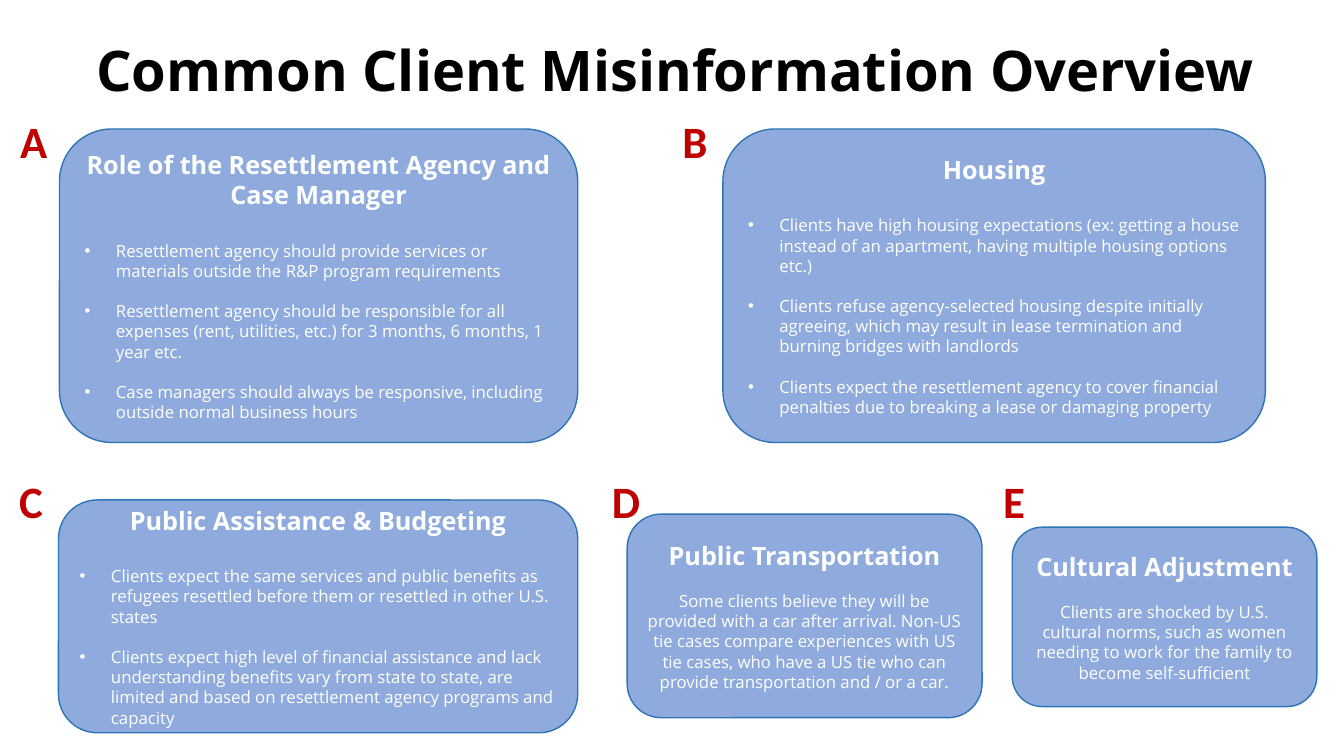
from lxml import etree
from pptx import Presentation
from pptx.dml.color import RGBColor
from pptx.enum.shapes import MSO_SHAPE as Shape
from pptx.enum.text import MSO_ANCHOR as Anchor, MSO_AUTO_SIZE as AutoSize, PP_ALIGN as Align
from pptx.oxml.ns import qn
from pptx.util import Inches, Pt

COLORS = {"title": "000000", "panel": "8FAADC", "border": "2E75B6",
          "text": "FFFFFF", "letter": "C00000"}

# Letter, letter position, panel box (left, top, width, height), heading, bulleted, texts
TOPICS = [
    ("B", (6.67, 1.08), (7.17, 1.28, 5.38, 3.11), "Housing", True, [
        "Clients have high housing expectations (ex: getting a house instead of an "
        "apartment, having multiple housing options etc.)",
        "Clients refuse agency-selected housing despite initially agreeing, which may "
        "result in lease termination and burning bridges with landlords",
        "Clients expect the resettlement agency to cover financial penalties due to "
        "breaking a lease or damaging property"]),
    ("D", (5.97, 4.65), (6.22, 5.1, 3.52, 2.02), "Public Transportation", False, [
        "Some clients believe they will be provided with a car after arrival. Non-US tie "
        "cases compare experiences with US tie cases, who have a US tie who can provide "
        "transportation and / or a car."]),
    ("E", (9.85, 4.65), (10.04, 5.23, 3.02, 1.78), "Cultural Adjustment", False, [
        "Clients are shocked by U.S. cultural norms, such as women needing to work for "
        "the family to become self-sufficient"]),
    ("C", (0.09, 4.65), (0.58, 4.96, 5.15, 2.31), "Public Assistance & Budgeting", True, [
        "Clients expect the same services and public benefits as refugees resettled "
        "before them or resettled in other U.S. states",
        "Clients expect high level of financial assistance and lack understanding "
        "benefits vary from state to state, are limited and based on resettlement agency "
        "programs and capacity"]),
    ("A", (0.1, 1.08), (0.59, 1.28, 5.14, 3.11),
     "Role of the Resettlement Agency and Case Manager", True, [
        "Resettlement agency should provide services or materials outside the R&P "
        "program requirements",
        "Resettlement agency should be responsible for all expenses (rent, utilities, "
        "etc.) for 3 months, 6 months, 1 year etc.",
        "Case managers should always be responsive, including outside normal business "
        "hours"]),
]


def color(name):
    return RGBColor.from_string(COLORS[name])


def write(para, text, size, color_name, bold=True, face="Open Sans", align=Align.CENTER):
    para.text = text
    para.alignment = align
    for span in para.runs:
        font = span.font
        font.name, font.size, font.bold = face, Pt(size), bold
        font.color.rgb = color(color_name)


def add_bullet(para):
    properties = para._p.get_or_add_pPr()
    properties.set("marL", str(Inches(0.31)))
    properties.set("indent", str(-Inches(0.31)))
    etree.SubElement(properties, qn("a:buFont")).set("typeface", "Arial")
    etree.SubElement(properties, qn("a:buChar")).set("char", "•")


def add_label(page, box, text, **style):
    label = page.shapes.add_textbox(*map(Inches, box))
    frame = label.text_frame
    frame.word_wrap = True
    frame.auto_size = AutoSize.SHAPE_TO_FIT_TEXT
    write(frame.paragraphs[0], text, **style)


def add_panel(page, box, heading, bulleted, texts):
    panel = page.shapes.add_shape(Shape.ROUNDED_RECTANGLE, *map(Inches, box))
    panel.shadow.inherit = False
    panel.fill.solid()
    panel.fill.fore_color.rgb = color("panel")
    panel.line.color.rgb = color("border")
    panel.line.width = Pt(1)

    frame = panel.text_frame
    frame.word_wrap = True
    frame.vertical_anchor = Anchor.MIDDLE
    write(frame.paragraphs[0], heading, 18, "text")
    for index, text in enumerate(texts):
        para = frame.add_paragraph()
        if bulleted:
            add_bullet(para)
        para.space_before = Pt(21.7 if bulleted and index == 0 else 14.5)
        write(para, text, 12, "text", bold=False,
              align=Align.LEFT if bulleted else Align.CENTER)


def build_overview(page):
    # Title
    add_label(page, (0.58, 0.3, 12.23, 0.77), "Common Client Misinformation Overview",
              size=40, color_name="title")
    # Topic panels
    for _, _, box, heading, bulleted, texts in TOPICS:
        add_panel(page, box, heading, bulleted, texts)
    # Topic letters
    for letter, corner, *_ in sorted(TOPICS):
        add_label(page, (*corner, 0.49, 0.64), letter, size=32, color_name="letter",
                  face="Calibri", align=Align.LEFT)


def main():
    deck = Presentation()
    deck.slide_width, deck.slide_height = Inches(13.33), Inches(7.5)
    build_overview(deck.slides.add_slide(deck.slide_layouts[6]))
    deck.save("out.pptx")


if __name__ == "__main__":
    main()
